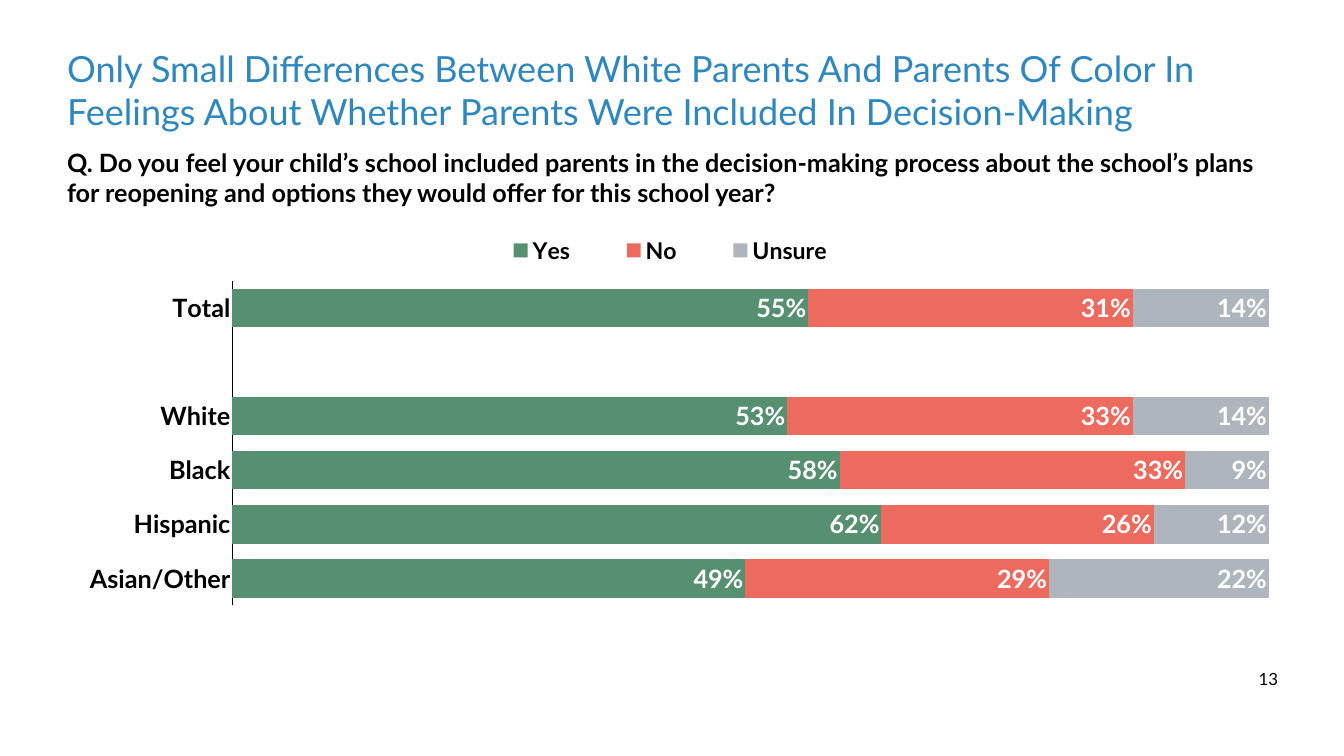
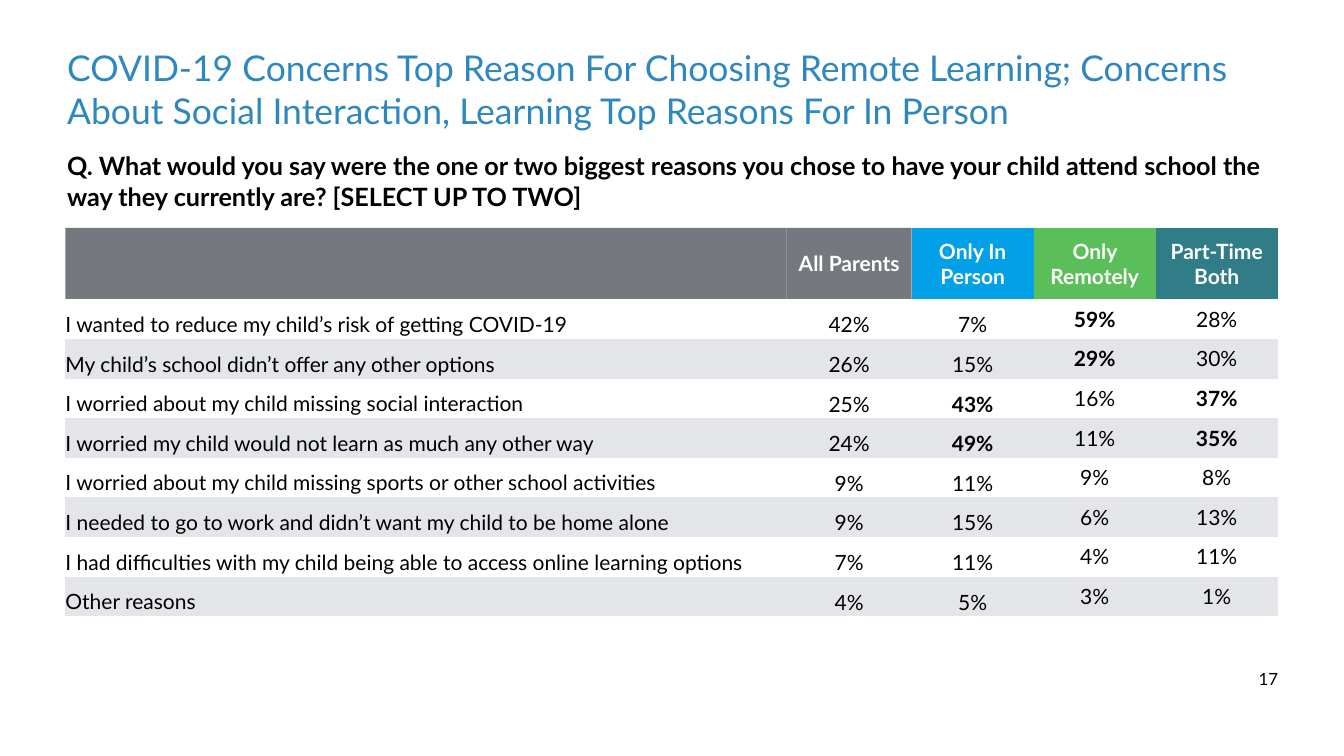
"""Build two survey slides: a stacked bar chart and a table of reasons."""
import dataclasses

import pptx
import pptx.chart.data
import pptx.dml.color
import pptx.enum.chart
import pptx.enum.text
import pptx.oxml
import pptx.oxml.ns
import pptx.util
from pptx.util import Cm

ALIGN = pptx.enum.text.PP_ALIGN
ANCHOR = pptx.enum.text.MSO_ANCHOR
CHART = pptx.enum.chart


@dataclasses.dataclass(frozen=True)
class Theme:
    font: str = "Lato"
    title: str = "2E88BF"
    text: str = "000000"
    white: str = "FFFFFF"
    band: str = "E3E5E8"
    header: str = "53585F"
    groups: tuple = ("02A0E7", "5ABF59", "317D87")
    answers: tuple = ("569071", "ED6A5E", "AEB5BC")
    body_size: float = 36
    legend_size: float = 33
    table_size: float = 30
    page_size: float = 24


def rgb(value):
    return pptx.dml.color.RGBColor.from_string(value)


class SurveyDeck:
    LEFT, WIDTH = Cm(3.18), Cm(61.39)
    CONTENT_LEFT = Cm(3.3)
    NO_GRID = "{2D5ABB26-0587-4C30-8999-92F81FD0307C}"

    def __init__(self, theme):
        self.theme = theme
        self.deck = pptx.Presentation()
        self.deck.slide_width, self.deck.slide_height = Cm(67.74), Cm(38.1)
        self.page = None

    def style(self, font, size, color=None, bold=False):
        font.name = self.theme.font
        font.size = pptx.util.Pt(size)
        font.bold = bold
        font.color.rgb = rgb(color or self.theme.text)

    def fill_text(self, frame, text, size, color=None, bold=False, align=ALIGN.LEFT):
        frame.text = text
        para = frame.paragraphs[0]
        para.alignment = align
        for span in para.runs:
            self.style(span.font, size, color, bold)
        return para

    def prepare(self, frame, wrap=True):
        frame.word_wrap = wrap
        frame.auto_size = pptx.enum.text.MSO_AUTO_SIZE.NONE
        frame.vertical_anchor = ANCHOR.TOP
        frame.margin_left = frame.margin_right = Cm(0.2)
        frame.margin_top = frame.margin_bottom = Cm(0.2)

    def add_page(self, title, title_size, number):
        self.page = self.deck.slides.add_slide(self.deck.slide_layouts[5])
        box = self.page.shapes.title
        box.left, box.top, box.width, box.height = self.LEFT, Cm(2.13), self.WIDTH, Cm(5.28)
        self.prepare(box.text_frame)
        self.fill_text(box.text_frame, title, title_size, self.theme.title)
        self.text(number, Cm(63.28), Cm(33.5), Cm(1.3), Cm(1.42),
                  self.theme.page_size, wrap=False, align=ALIGN.CENTER)

    def text(self, text, left, top, width, height, size, wrap=True, **look):
        box = self.page.shapes.add_textbox(left, top, width, height)
        self.prepare(box.text_frame, wrap)
        self.fill_text(box.text_frame, text, size, **look)

    def question(self, text, top):
        self.text(text, self.LEFT, top, self.WIDTH, Cm(4), self.theme.body_size, bold=True)

    def place(self, parent, successors, x, y, width, height, inner=False):
        target = '<c:layoutTarget val="inner"/>' if inner else ""
        sizes = "".join(f'<c:{tag} val="{value}"/>' for tag, value in
                        zip("xywh", (x, y, width, height)))
        layout = pptx.oxml.parse_xml(
            f'<c:layout {pptx.oxml.ns.nsdecls("c")}><c:manualLayout>{target}'
            f'<c:xMode val="edge"/><c:yMode val="edge"/>{sizes}'
            '</c:manualLayout></c:layout>')
        for old in parent.findall(pptx.oxml.ns.qn("c:layout")):
            parent.remove(old)
        parent.insert_element_before(layout, *successors)

    def stacked_bars(self, categories, answers):
        theme = self.theme
        data = pptx.chart.data.CategoryChartData(number_format="0%")
        data.categories = categories
        for name, values in answers.items():
            data.add_series(name, values)
        chart = self.page.shapes.add_chart(
            CHART.XL_CHART_TYPE.BAR_STACKED, self.CONTENT_LEFT, Cm(11.63),
            Cm(60.96), Cm(19.79), data).chart
        chart.has_title = False
        self.style(chart.font, 10)
        chart.has_legend = True
        chart.legend.position = CHART.XL_LEGEND_POSITION.TOP
        chart.legend.include_in_layout = False
        self.style(chart.legend.font, theme.legend_size, bold=True)
        self.place(chart.legend._element, ("c:overlay", "c:spPr", "c:txPr"),
                   0.33, 0.01, 0.34, 0.08)
        self.place(chart._chartSpace.chart.plotArea, ("c:barChart",),
                   0.138, 0.128, 0.857, 0.826, inner=True)

        axis = chart.category_axis
        axis.reverse_order = True
        axis.major_tick_mark = CHART.XL_TICK_MARK.NONE
        axis.format.line.color.rgb = rgb(theme.text)
        axis.format.line.width = pptx.util.Pt(1)
        self.style(axis.tick_labels.font, theme.body_size, bold=True)
        scale = chart.value_axis
        scale.minimum_scale, scale.maximum_scale = 0, 0.99
        scale.has_major_gridlines = False
        scale.major_tick_mark = CHART.XL_TICK_MARK.NONE
        scale.tick_label_position = CHART.XL_TICK_LABEL_POSITION.NONE
        scale.format.line.fill.background()

        plot = chart.plots[0]
        plot.gap_width, plot.overlap = 40, 100
        plot.vary_by_categories = False
        for series, color in zip(plot.series, theme.answers):
            series.format.fill.solid()
            series.format.fill.fore_color.rgb = rgb(color)
            labels = series.data_labels
            labels.show_value = True
            labels.number_format = "#,##0%"
            labels.number_format_is_linked = False
            labels.position = CHART.XL_LABEL_POSITION.INSIDE_END
            self.style(labels.font, theme.body_size, theme.white, True)

    def cell(self, cell, text, fill, margins, spacing=None, **look):
        cell.fill.solid()
        cell.fill.fore_color.rgb = rgb(fill)
        cell.vertical_anchor = ANCHOR.MIDDLE
        side, edge = margins
        cell.margin_left = cell.margin_right = side
        cell.margin_top = cell.margin_bottom = edge
        para = self.fill_text(cell.text_frame, text, self.theme.table_size, **look)
        if spacing:
            para.line_spacing = pptx.util.Pt(spacing)

    def fade(self, cell, percent):
        fill = cell._tc.tcPr.find(pptx.oxml.ns.qn("a:solidFill"))
        fill[0].append(pptx.oxml.parse_xml(
            f'<a:alpha {pptx.oxml.ns.nsdecls("a")} val="{percent * 1000}"/>'))

    def reasons_table(self, headings, rows, highlights):
        theme = self.theme
        widths = [Cm(36.35), Cm(6.3)] + [Cm(6.15)] * 3
        heights = [Cm(3.61)] + [Cm(1.97)] * len(rows)
        table = self.page.shapes.add_table(
            len(heights), len(widths), self.CONTENT_LEFT, Cm(11.48),
            sum(widths), sum(heights)).table
        table.horz_banding = False
        table._tbl.tblPr.find(pptx.oxml.ns.qn("a:tableStyleId")).text = self.NO_GRID
        for column, width in zip(table.columns, widths):
            column.width = width
        for row, height in zip(table.rows, heights):
            row.height = height

        even = (Cm(0.15), Cm(0.15))
        fills = (theme.header, theme.header) + theme.groups
        for column, (heading, fill) in enumerate(zip(headings, fills)):
            self.cell(table.cell(0, column), heading, fill, even,
                      color=theme.white, bold=True, align=ALIGN.CENTER)
        for column in range(2):
            self.fade(table.cell(0, column), 80)

        tight, narrow = (Cm(0), Cm(0.08)), (Cm(0.1), Cm(0.08))
        formats = [(tight, 51), (narrow, 52), (narrow, 52), (even, None), (even, None)]
        for index, values in enumerate(rows, 1):
            fill = theme.white if index % 2 else theme.band
            for column, (value, (margins, spacing)) in enumerate(zip(values, formats)):
                self.cell(table.cell(index, column), value, fill, margins, spacing,
                          bold=(index, column) in highlights,
                          align=ALIGN.CENTER if column else ALIGN.LEFT)


def main():
    survey = SurveyDeck(Theme())

    survey.add_page("Only Small Differences Between White Parents And Parents Of Color In "
                    "Feelings About Whether Parents Were Included In Decision-Making", 51.5, "13")
    survey.question("Q. Do you feel your child’s school included parents in the decision-making "
                    "process about the school’s plans for reopening and options they would "
                    "offer for this school year?", Cm(7.21))
    survey.stacked_bars(
        ["Total", "", "White", "Black", "Hispanic", "Asian/Other"],
        {"Yes": (0.55, None, 0.53, 0.58, 0.62, 0.49),
         "No": (0.31, None, 0.33, 0.33, 0.26, 0.29),
         "Unsure": (0.14, None, 0.14, 0.09, 0.12, 0.22)})

    survey.add_page("COVID-19 Concerns Top Reason For Choosing Remote Learning; Concerns "
                    "About Social Interaction, Learning Top Reasons For In Person", 50.7, "17")
    survey.reasons_table(
        ("", "All Parents", "Only In Person", "Only Remotely", "Part-Time Both"),
        [("I wanted to reduce my child’s risk of getting COVID-19", "42%", "7%", "59%", "28%"),
         ("My child’s school didn’t offer any other options", "26%", "15%", "29%", "30%"),
         ("I worried about my child missing social interaction", "25%", "43%", "16%", "37%"),
         ("I worried my child would not learn as much any other way",
          "24%", "49%", "11%", "35%"),
         ("I worried about my child missing sports or other school activities",
          "9%", "11%", "9%", "8%"),
         ("I needed to go to work and didn’t want my child to be home alone",
          "9%", "15%", "6%", "13%"),
         ("I had difficulties with my child being able to access online learning options",
          "7%", "11%", "4%", "11%"),
         ("Other reasons", "4%", "5%", "3%", "1%")],
        highlights={(1, 3), (2, 3), (3, 2), (3, 4), (4, 2), (4, 4)})
    survey.question("Q. What would you say were the one or two biggest reasons you chose to have "
                    "your child attend school the way they currently are? [SELECT UP TO TWO]",
                    Cm(7.39))

    survey.deck.save("out.pptx")


if __name__ == "__main__":
    main()
